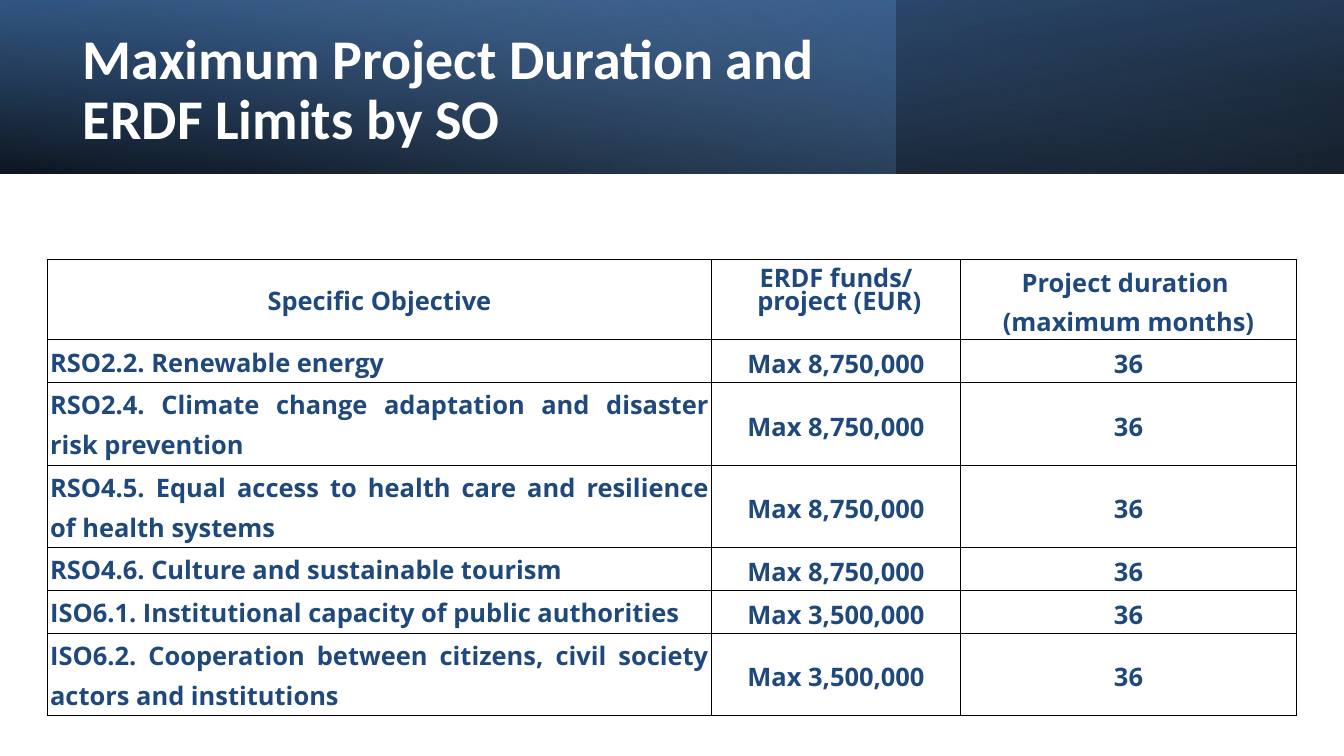
from lxml.etree import SubElement
from pptx import Presentation
from pptx.dml.color import RGBColor
from pptx.enum.shapes import MSO_SHAPE as Shape
from pptx.enum.text import MSO_ANCHOR as Anchor, PP_ALIGN as Align
from pptx.oxml.ns import qn
from pptx.util import Pt

PX = 9144
WIDTH, HEIGHT, HEADER_HEIGHT = 2199, 1237, 284

BLACK = RGBColor(0x00, 0x00, 0x00)
WHITE = RGBColor(0xFF, 0xFF, 0xFF)
NAVY = RGBColor(0x1F, 0x49, 0x7D)
DEEP_BLUE = RGBColor(0x37, 0x60, 0x92)
BLUE = RGBColor(0x4F, 0x81, 0xBD)
PALE_BLUE = RGBColor(0x95, 0xB3, 0xD7)

COLUMNS = (1086, 408, 549)
HEADING_ROW, SINGLE_ROW, DOUBLE_ROW = 131, 70, 135
HEADINGS = (
    ["Specific Objective"],
    ["ERDF funds/", " project (EUR)"],
    ["Project duration ", "(maximum months)"],
)
OBJECTIVES = (
    ("RSO2.2. Renewable energy", "Max 8,750,000", SINGLE_ROW),
    ("RSO2.4. Climate change adaptation and disaster risk prevention",
     "Max 8,750,000", DOUBLE_ROW),
    ("RSO4.5. Equal access to health care and resilience of health systems",
     "Max 8,750,000", DOUBLE_ROW),
    ("RSO4.6. Culture and sustainable tourism", "Max 8,750,000", SINGLE_ROW),
    ("ISO6.1. Institutional capacity of public authorities", "Max 3,500,000", SINGLE_ROW),
    ("ISO6.2. Cooperation between citizens, civil society actors and institutions",
     "Max 3,500,000", DOUBLE_ROW),
)
MONTHS = "36"


def emu(*lengths):
    """Turn px lengths into EMU."""
    return [length * PX for length in lengths]


def write(frame, lines, size=30, font="Open Sans", color=NAVY, align=Align.CENTER,
          spacing=1.15, gap=0, after=0):
    """Fill a text frame with one bold paragraph per line."""
    for index, line in enumerate(lines):
        para = frame.add_paragraph() if index else frame.paragraphs[0]
        para.alignment = align
        para.line_spacing = spacing
        para.space_before = Pt(gap if index else 0)
        para.space_after = Pt(after)
        span = para.add_run()
        span.text = line
        span.font.size = Pt(size)
        span.font.name = font
        span.font.bold = True
        span.font.color.rgb = color


def add_gradient(page, box, stops, angle, flip=False, rotation=0):
    """Add a rectangle with a translucent linear gradient, angle clockwise."""
    shape = page.shapes.add_shape(Shape.RECTANGLE, *emu(*box))
    shape.shadow.inherit = False
    shape.line.fill.background()
    shape.rotation = rotation
    if flip:
        shape._element.spPr.find(qn("a:xfrm")).set("flipH", "1")
    shape.fill.gradient()
    shape.fill.gradient_angle = 360 - angle
    for stop, (position, color, _) in zip(shape.fill.gradient_stops, stops):
        stop.position = position / 100
        stop.color.rgb = color
    colors = shape._element.spPr.iter(qn("a:srgbClr"))
    for node, (_, _, opacity) in zip(list(colors), stops):
        SubElement(node, qn("a:alpha"), val=str(opacity * 1000))


def add_header(page, box, title):
    """Draw the layered blue band with its title."""
    left, top, width, height = box
    add_gradient(page, box, [(0, BLACK, 96), (100, DEEP_BLUE, 100)], 100, True, 180)
    add_gradient(page, (left, top, width * 2 // 3, height),
                 [(0, BLUE, 41), (74, PALE_BLUE, 0)], 140)
    add_gradient(page, box, [(0, BLACK, 63), (78, BLUE, 15)], 260, True)
    label = page.shapes.add_textbox(*emu(left + 126, top + 45, 1274, height - 75))
    frame = label.text_frame
    frame.word_wrap = True
    frame.vertical_anchor = Anchor.MIDDLE
    write(frame, [title], size=66, font="Calibri", color=WHITE, align=Align.LEFT,
          spacing=0.9, after=6)


def style_cell(cell, anchor, margins):
    """Give a cell black borders, white fill, an anchor and margins."""
    props = cell._tc.get_or_add_tcPr()
    for side in ("lnL", "lnR", "lnT", "lnB"):
        border = SubElement(props, qn(f"a:{side}"), w=str(Pt(1)))
        fill = SubElement(border, qn("a:solidFill"))
        SubElement(fill, qn("a:srgbClr"), val=str(BLACK))
    cell.fill.solid()
    cell.fill.fore_color.rgb = WHITE
    cell.vertical_anchor = anchor
    cell.margin_left, cell.margin_top, cell.margin_right, cell.margin_bottom = emu(*margins)


def add_limits_table(page, left, top):
    """Place the table of funding and duration limits."""
    heights = [HEADING_ROW] + [height for _, _, height in OBJECTIVES]
    box = emu(left, top, sum(COLUMNS), sum(heights))
    table = page.shapes.add_table(len(heights), len(COLUMNS), *box).table
    table.first_row = table.horz_banding = False
    for column, width in zip(table.columns, COLUMNS):
        column.width = width * PX
    for row, height in zip(table.rows, heights):
        row.height = height * PX

    objective, funds, duration = (table.cell(0, index) for index in range(3))
    style_cell(objective, Anchor.MIDDLE, (4, 0, 4, 5))
    style_cell(funds, Anchor.TOP, (7, 38, 7, 0))
    style_cell(duration, Anchor.TOP, (7, 0, 7, 0))
    write(objective.text_frame, HEADINGS[0])
    write(funds.text_frame, HEADINGS[1], spacing=Pt(13.8), gap=13.8)
    write(duration.text_frame, HEADINGS[2])

    for row, (name, limit, _) in enumerate(OBJECTIVES, 1):
        cell = table.cell(row, 0)
        style_cell(cell, Anchor.TOP, (4, 0, 4, 5))
        write(cell.text_frame, [name], align=Align.JUSTIFY)
        for column, text in enumerate((limit, MONTHS), 1):
            cell = table.cell(row, column)
            style_cell(cell, Anchor.MIDDLE, (7, 0, 7, 0))
            write(cell.text_frame, [text])


def main():
    """Build and save the deck."""
    deck = Presentation()
    deck.slide_width, deck.slide_height = emu(WIDTH, HEIGHT)
    page = deck.slides.add_slide(deck.slide_layouts[6])
    add_header(page, (0, 0, WIDTH, HEADER_HEIGHT),
               "Maximum Project Duration and ERDF Limits by SO")
    add_limits_table(page, 78, 425)
    deck.save("out.pptx")


if __name__ == "__main__":
    main()
